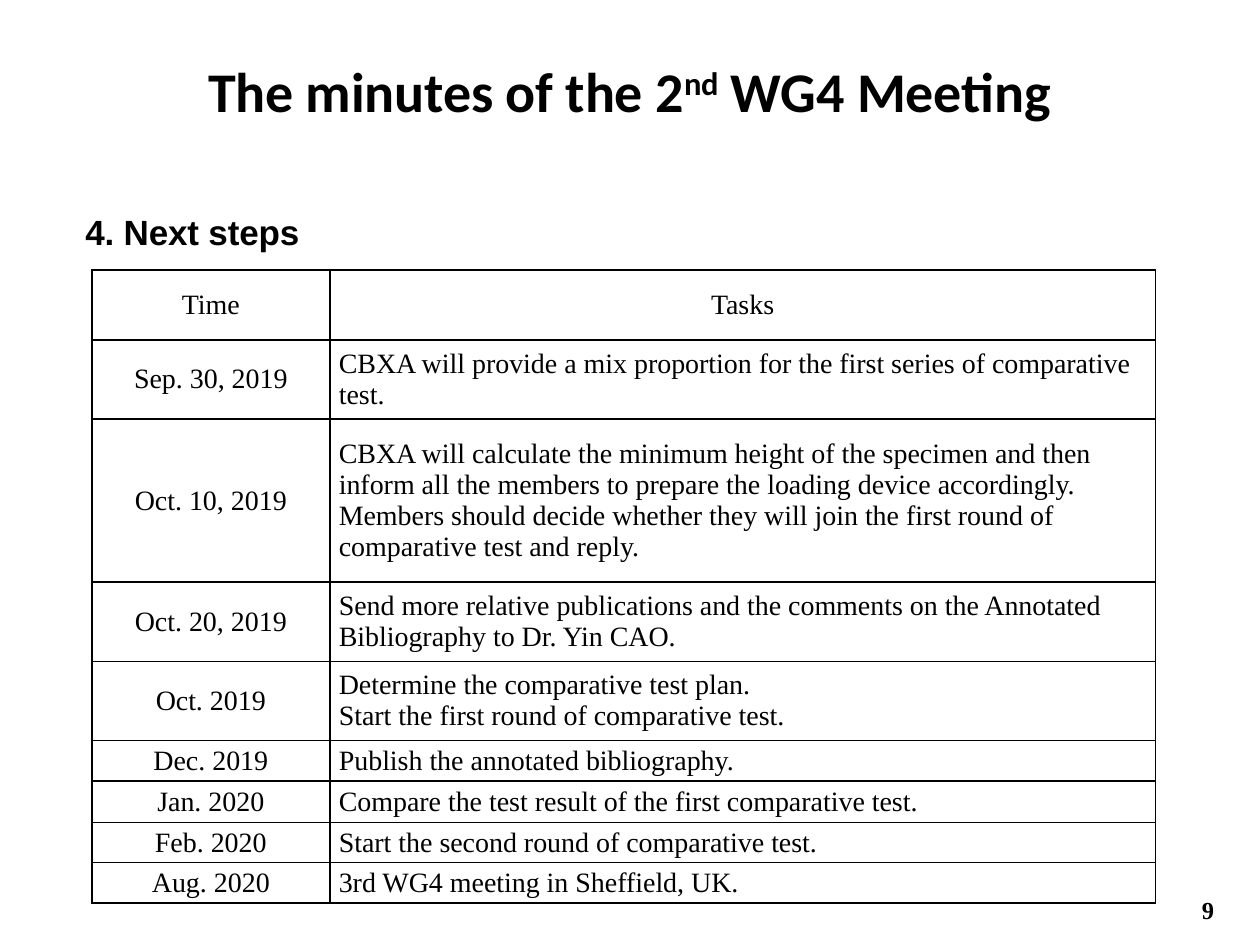
from lxml import etree
from pptx import Presentation
from pptx.dml.color import RGBColor
from pptx.enum.text import MSO_ANCHOR, MSO_AUTO_SIZE, PP_ALIGN
from pptx.oxml.ns import qn
from pptx.util import Cm, Pt

BLACK = RGBColor(0x00, 0x00, 0x00)
LEFT, CENTER = PP_ALIGN.LEFT, PP_ALIGN.CENTER
TOP, MIDDLE = MSO_ANCHOR.TOP, MSO_ANCHOR.MIDDLE
NO_AUTOFIT = MSO_AUTO_SIZE.NONE

COLUMN_WIDTHS = (4.8, 16.64)
SCHEDULE = (
    (1.41, "Time", ["Tasks"]),
    (1.6, "Sep. 30, 2019", ["CBXA will provide a mix proportion for the first series of comparative test."]),
    (3.28, "Oct. 10, 2019", [
        "CBXA will calculate the minimum height of the specimen and then inform all the "
        "members to prepare the loading device accordingly.",
        "Members should decide whether they will join the first round of comparative test and reply.",
    ]),
    (1.6, "Oct. 20, 2019", [
        "Send more relative publications and the comments on the Annotated Bibliography to Dr. Yin CAO.",
    ]),
    (1.6, "Oct. 2019", ["Determine the comparative test plan.", "Start the first round of comparative test."]),
    (0.81, "Dec. 2019", ["Publish the annotated bibliography."]),
    (0.84, "Jan. 2020", ["Compare the test result of the first comparative test."]),
    (0.81, "Feb. 2020", ["Start the second round of comparative test."]),
    (0.81, "Aug. 2020", ["3rd WG4 meeting in Sheffield, UK."]),
)


class MinutesSlide:
    """Holds the style and the current slide of the meeting minutes."""

    heading_font = "Calibri"
    section_font = "Arial"
    text_font = "Times New Roman"
    color = BLACK

    def __init__(self, presentation):
        self.slide = presentation.slides.add_slide(presentation.slide_layouts[1])

    def add_run(self, paragraph, text, font, size, bold=False, baseline=0):
        run = paragraph.add_run()
        run.text = text
        run.font.name = font
        run.font.size = Pt(size)
        run.font.bold = bold
        run.font.color.rgb = self.color
        properties = run.font._element
        if bold:
            properties.set("spc", "-10")
        if baseline:
            properties.set("baseline", str(baseline * 1000))

    def prepare_frame(self, shape, box, top_inset=0):
        shape.left, shape.top, shape.width, shape.height = map(Cm, box)
        frame = shape.text_frame
        frame.word_wrap = True
        frame.auto_size = NO_AUTOFIT
        frame.vertical_anchor = TOP
        frame.margin_left = frame.margin_right = frame.margin_bottom = 0
        frame.margin_top = Cm(top_inset)
        return frame.paragraphs[0]

    def set_indent(self, paragraph, indent):
        properties = paragraph._p.get_or_add_pPr()
        properties.set("marL", str(Cm(indent)))
        properties.set("indent", "0")
        return properties

    def add_title(self, pieces, box):
        paragraph = self.prepare_frame(self.slide.shapes.title, box, 0.5)
        paragraph.alignment = CENTER
        paragraph.space_before = Pt(0.9)
        for text, baseline in pieces:
            self.add_run(paragraph, text, self.heading_font, 32, True, baseline)

    def add_section(self, text, box):
        paragraph = self.prepare_frame(self.slide.placeholders[1], box, 0.2)
        paragraph.line_spacing = 1.5
        paragraph.space_before = Pt(11.8)
        etree.SubElement(self.set_indent(paragraph, 0.25), qn("a:buNone"))
        self.add_run(paragraph, text, self.section_font, 20, True)

    def add_page_number(self, text, box):
        shape = self.slide.shapes.add_textbox(*map(Cm, box))
        paragraph = self.prepare_frame(shape, box)
        paragraph.line_spacing = Pt(16.2)
        self.set_indent(paragraph, 0.1)
        self.add_run(paragraph, text, self.text_font, 14, True)

    def add_borders(self, cell):
        properties = cell._tc.get_or_add_tcPr()
        for position, side in enumerate(("a:lnL", "a:lnR", "a:lnT", "a:lnB")):
            line = etree.Element(qn(side), w=str(Pt(1)))
            fill = etree.SubElement(line, qn("a:solidFill"))
            etree.SubElement(fill, qn("a:srgbClr"), val=str(self.color))
            properties.insert(position, line)

    def fill_cell(self, cell, lines, alignment):
        cell.fill.background()
        cell.vertical_anchor = MIDDLE
        cell.margin_left = cell.margin_right = Cm(0.18)
        cell.margin_top = cell.margin_bottom = 0
        self.add_borders(cell)
        frame = cell.text_frame
        for number, text in enumerate(lines):
            paragraph = frame.add_paragraph() if number else frame.paragraphs[0]
            paragraph.alignment = alignment
            self.add_run(paragraph, text, self.text_font, 16)

    def add_schedule(self, rows, left, top):
        width, height = sum(COLUMN_WIDTHS), sum(row[0] for row in rows)
        box = map(Cm, (left, top, width, height))
        table = self.slide.shapes.add_table(len(rows), len(COLUMN_WIDTHS), *box).table
        table.first_row = table.horz_banding = False
        for column, column_width in zip(table.columns, COLUMN_WIDTHS):
            column.width = Cm(column_width)
        for index, (row_height, time, tasks) in enumerate(rows):
            table.rows[index].height = Cm(row_height)
            self.fill_cell(table.cell(index, 0), [time], CENTER)
            self.fill_cell(table.cell(index, 1), tasks, LEFT if index else CENTER)


def main():
    presentation = Presentation()
    presentation.slide_width, presentation.slide_height = Cm(25.4), Cm(19.05)
    minutes = MinutesSlide(presentation)
    minutes.add_section("4. Next steps", (1.47, 3.61, 23.06, 1.35))
    minutes.add_title(
        [("The minutes of the 2", 0), ("nd", 30), (" WG4 Meeting", 0)],
        (1.73, 0.64, 21.92, 1.88),
    )
    minutes.add_schedule(SCHEDULE, 1.85, 5.44)
    minutes.add_page_number("9", (24.13, 18.06, 1.09, 0.71))
    presentation.save("out.pptx")


if __name__ == "__main__":
    main()
